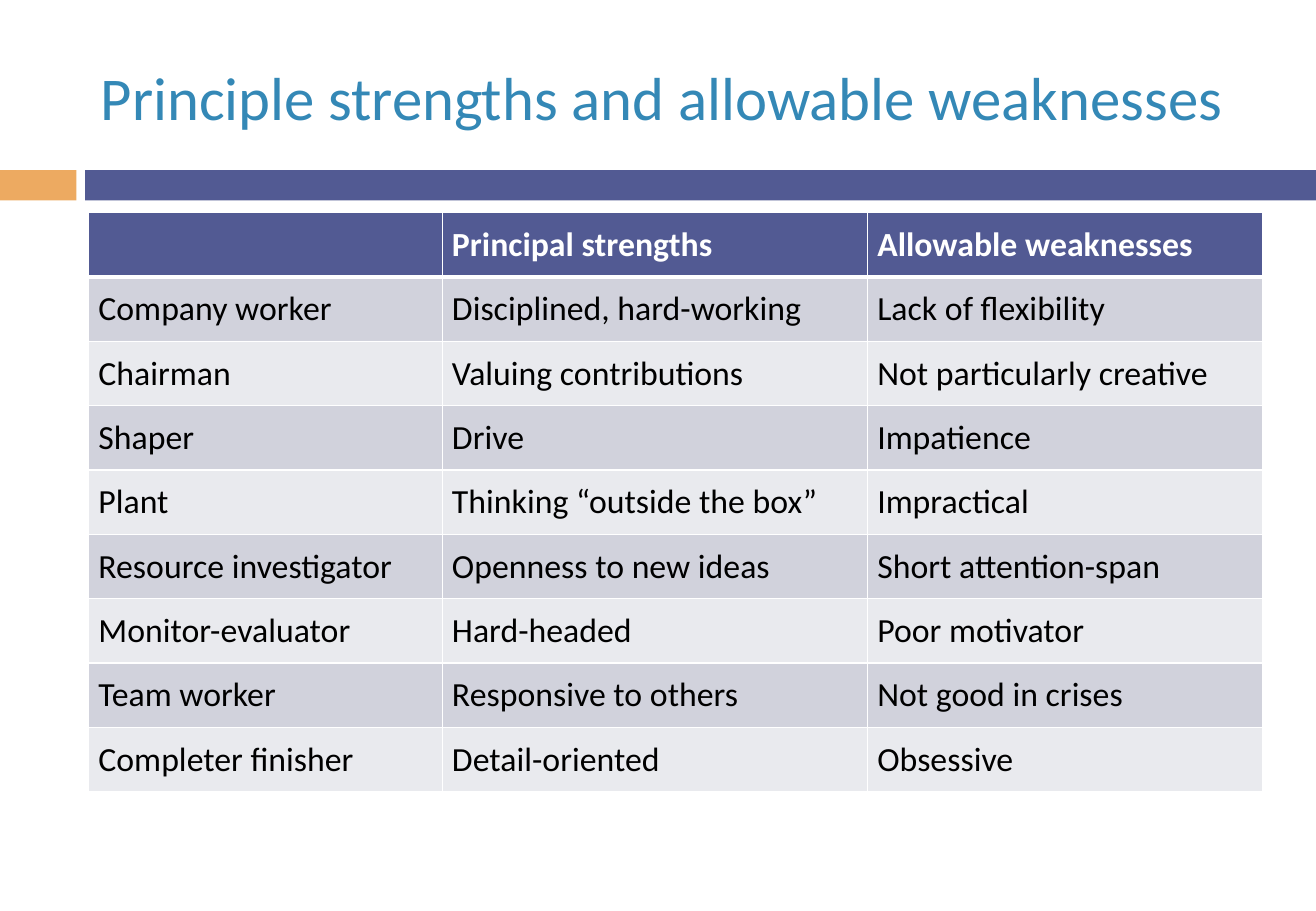
from lxml import etree
from pptx import Presentation
from pptx.dml.color import RGBColor
from pptx.enum.shapes import MSO_SHAPE
from pptx.enum.text import MSO_ANCHOR, PP_ALIGN
from pptx.oxml.ns import qn
from pptx.util import Inches, Pt

RECT = MSO_SHAPE.RECTANGLE
MIDDLE = MSO_ANCHOR.MIDDLE
LEFT = PP_ALIGN.LEFT
FONT = "Calibri"
WHITE, BLACK = "FFFFFF", "000000"
NAVY, AMBER, BLUE = "525A93", "EDAA61", "3488B6"
BANDS = ("D1D2DC", "E9EAEE")
WIDE, HIGH = 10.83, 7.5
COLS = (2.91, 3.5, 3.25)
ROLES = (
    ("", "Principal strengths", "Allowable weaknesses"),
    ("Company worker", "Disciplined, hard-working", "Lack of flexibility"),
    ("Chairman", "Valuing contributions", "Not particularly creative"),
    ("Shaper", "Drive", "Impatience"),
    ("Plant", "Thinking “outside the box”", "Impractical"),
    ("Resource investigator", "Openness to new ideas", "Short attention-span"),
    ("Monitor-evaluator", "Hard-headed", "Poor motivator"),
    ("Team worker", "Responsive to others", "Not good in crises"),
    ("Completer finisher", "Detail-oriented", "Obsessive"),
)


def paint(target, color):
    target.solid()
    target.fore_color.rgb = RGBColor.from_string(color)


def write(frame, text, size, color, bold=False):
    para = frame.paragraphs[0]
    para.alignment = LEFT
    run = para.add_run()
    run.text = text
    run.font.name = FONT
    run.font.size = Pt(size)
    run.font.bold = bold
    paint(run.font.fill, color)


def place(shape, box):
    shape.left, shape.top, shape.width, shape.height = map(Inches, box)


def add_title(slide, box, text):
    title = slide.shapes.title
    place(title, box)
    title.text_frame.word_wrap = True
    title.text_frame.vertical_anchor = MIDDLE
    write(title.text_frame, text, 36, BLUE)


def add_band(slide, box):
    left, top, width, height = box
    tab, gap = 0.63, 0.07
    start = tab + gap
    parts = ((left, tab, AMBER), (left + start, width - start, NAVY))
    for x, span, color in parts:
        bar = slide.shapes.add_shape(RECT, *map(Inches, (x, top, span, height)))
        bar.shadow.inherit = False
        paint(bar.fill, color)
        bar.line.fill.background()


def add_edges(cell, row):
    props = cell._tc.get_or_add_tcPr()
    thick = {"lnT": row == 1, "lnB": row == 0}
    for spot, side in enumerate(("lnL", "lnR", "lnT", "lnB")):
        width = Pt(3 if thick.get(side) else 1)
        line = etree.Element(qn(f"a:{side}"), w=str(width))
        fill = etree.SubElement(line, qn("a:solidFill"))
        etree.SubElement(fill, qn("a:srgbClr"), val=WHITE)
        props.insert(spot, line)


def add_roles(slide, box):
    grid = slide.shapes.add_table(len(ROLES), len(COLS), *map(Inches, box)).table
    for col, width in zip(grid.columns, COLS):
        col.width = Inches(width)
    for row, texts in enumerate(ROLES):
        head = row == 0
        grid.rows[row].height = Inches(box[3] / len(ROLES))
        for col, text in enumerate(texts):
            cell = grid.cell(row, col)
            paint(cell.fill, NAVY if head else BANDS[(row - 1) % 2])
            add_edges(cell, row)
            cell.vertical_anchor = MIDDLE
            cell.margin_left = cell.margin_right = Inches(0.08)
            cell.margin_top = cell.margin_bottom = 0
            if text:
                write(cell.text_frame, text, 20, WHITE if head else BLACK, head)


def main():
    deck = Presentation()
    deck.slide_width, deck.slide_height = Inches(WIDE), Inches(HIGH)
    slide = deck.slides.add_slide(deck.slide_layouts[5])
    paint(slide.background.fill, WHITE)
    left, width = 0.73, sum(COLS)
    add_band(slide, (0, 1.4, WIDE, 0.25))
    add_title(slide, (left, 0.25, width, 1.08),
              "Principle strengths and allowable weaknesses")
    add_roles(slide, (left, 1.75, width, 4.77))
    deck.save("out.pptx")


if __name__ == "__main__":
    main()
